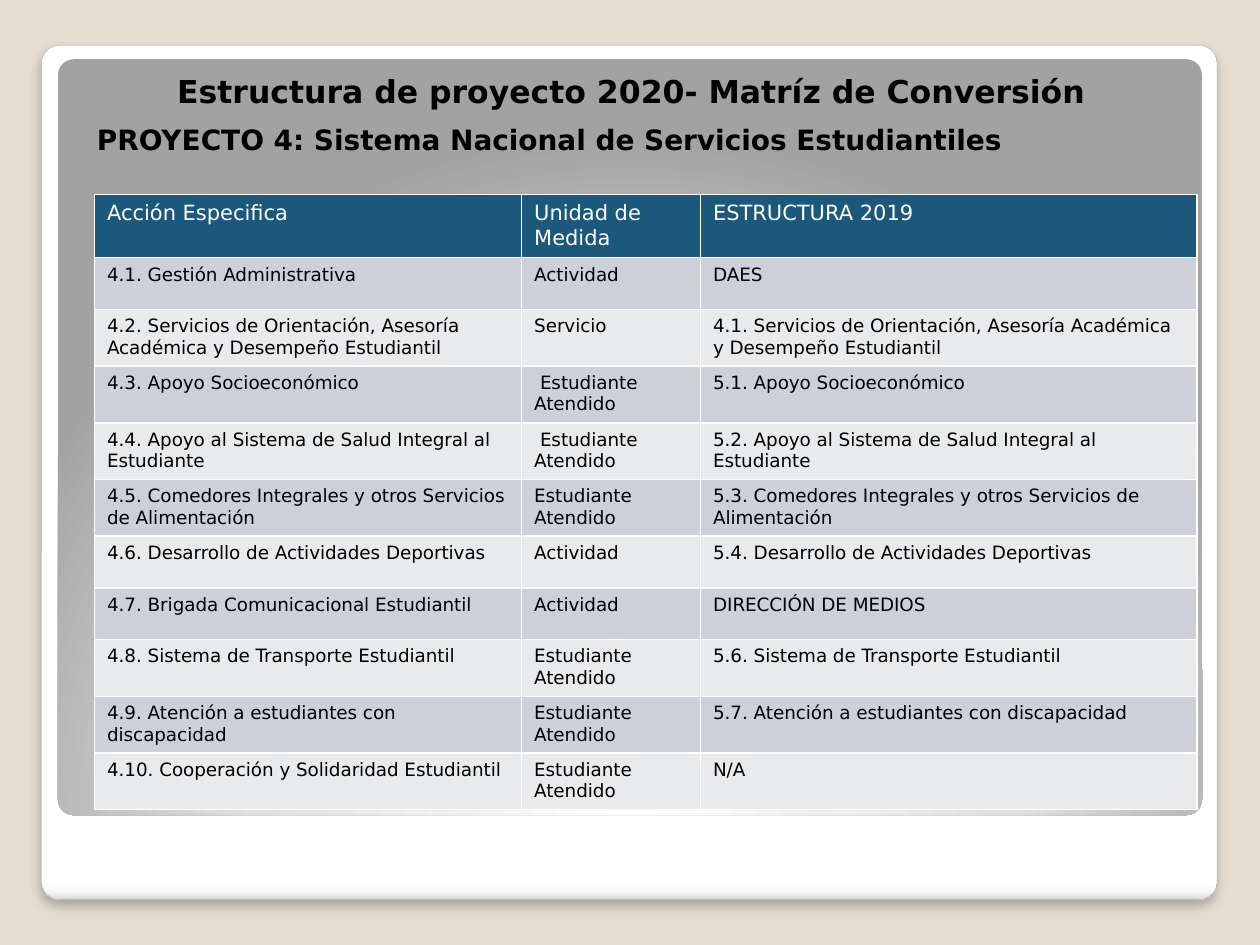
"""Build the slide with the 2020 project structure conversion matrix."""
from dataclasses import dataclass

import pptx
import pptx.dml.color
import pptx.enum.shapes
import pptx.enum.text
import pptx.oxml
import pptx.oxml.ns
import pptx.util

SLIDE_WIDTH = pptx.util.Inches(10)
SLIDE_HEIGHT = pptx.util.Inches(7.5)
FONT = "DejaVu Sans"
BLACK, WHITE, NAVY = "000000", "FFFFFF", "1B587C"
BANDS = ("CDD1D7", "E8EAEC")
COLUMN_SHARES = (33.9, 14.2, 39.4)
ROW_SHARE = 5.47
CORNER = 0.021
ATTENDED = "Estudiante Atendido"
HEADER = ("Acción Especifica", "Unidad de Medida", "ESTRUCTURA 2019")
ACTIONS = (
    ("4.1. Gestión Administrativa", "Actividad", "DAES"),
    ("4.2. Servicios de Orientación, Asesoría Académica y Desempeño Estudiantil", "Servicio",
     "4.1. Servicios de Orientación, Asesoría Académica y Desempeño Estudiantil"),
    ("4.3. Apoyo Socioeconómico", " " + ATTENDED, "5.1. Apoyo Socioeconómico"),
    ("4.4. Apoyo al Sistema de Salud Integral al Estudiante", " " + ATTENDED,
     "5.2. Apoyo al Sistema de Salud Integral al Estudiante"),
    ("4.5. Comedores Integrales y otros Servicios de Alimentación", ATTENDED,
     "5.3. Comedores Integrales y otros Servicios de Alimentación"),
    ("4.6. Desarrollo de Actividades Deportivas", "Actividad",
     "5.4. Desarrollo de Actividades Deportivas"),
    ("4.7. Brigada Comunicacional Estudiantil", "Actividad", "DIRECCIÓN DE MEDIOS"),
    ("4.8. Sistema de Transporte Estudiantil", ATTENDED, "5.6. Sistema de Transporte Estudiantil"),
    ("4.9. Atención a estudiantes con discapacidad", ATTENDED,
     "5.7. Atención a estudiantes con discapacidad"),
    ("4.10. Cooperación y Solidaridad Estudiantil", ATTENDED, "N/A"),
)


def across(share: float) -> int:
    """Turn a percentage of the slide's width into a length."""
    return round(SLIDE_WIDTH * share / 100)


def down(share: float) -> int:
    """Turn a percentage of the slide's height into a length."""
    return round(SLIDE_HEIGHT * share / 100)


@dataclass(frozen=True)
class Area:
    """A rectangle in percentages of the slide's size."""
    left: float
    top: float
    width: float
    height: float

    def lengths(self) -> tuple[int, int, int, int]:
        """Return left, top, width and height as lengths."""
        return across(self.left), down(self.top), across(self.width), down(self.height)


@dataclass(frozen=True)
class Panel:
    """A rounded background panel with gradient stops and their direction."""
    area: Area
    stops: tuple[tuple[int, str], ...]
    direction: str
    outline: str = ""
    shadow: str = ""


CARD = Panel(
    Area(3.3, 4.8, 93.3, 90.4),
    ((0, WHITE), (98, WHITE), (99, "F7F7F7"), (100, "DADADA")),
    '<a:lin ang="5400000" scaled="0"/>',
    outline="A4A4A4",
    shadow='<a:outerShdw {} blurRad="76200" dist="50800" dir="5400000" algn="t" rotWithShape="0">'
           '<a:srgbClr val="000000"><a:alpha val="25000"/></a:srgbClr></a:outerShdw>',
)
BACKDROP = Panel(
    Area(4.6, 6.27, 90.8, 80),
    ((0, WHITE), (55, "E1E1E1"), (100, "A2A2A2")),
    '<a:path path="circle"><a:fillToRect l="50000" t="175000" r="50000" b="-75000"/></a:path>',
)


def color(code: str) -> pptx.dml.color.RGBColor:
    """Turn a hex string into a colour."""
    return pptx.dml.color.RGBColor.from_string(code)


def write(frame, text: str, *, size: float, ink: str = BLACK, bold: bool = False,
          align=pptx.enum.text.PP_ALIGN.LEFT) -> None:
    """Write one formatted paragraph into a text frame."""
    para = frame.paragraphs[0]
    para.alignment = align
    span = para.add_run()
    span.text = text
    span.font.name = FONT
    span.font.size = pptx.util.Pt(size)
    span.font.bold = bold
    span.font.color.rgb = color(ink)


def draw_panel(page, panel: Panel) -> None:
    """Draw a rounded panel with its gradient, outline and shadow."""
    shape = page.shapes.add_shape(
        pptx.enum.shapes.MSO_SHAPE.ROUNDED_RECTANGLE, *panel.area.lengths())
    shape.adjustments[0] = CORNER
    shape.fill.solid()
    shape.shadow.inherit = False
    if panel.outline:
        shape.line.color.rgb = color(panel.outline)
        shape.line.width = pptx.util.Pt(0.16)
    else:
        shape.line.fill.background()
    namespace = pptx.oxml.ns.nsdecls("a")
    stops = "".join(f'<a:gs pos="{share * 1000}"><a:srgbClr val="{code}"/></a:gs>'
                    for share, code in panel.stops)
    gradient = pptx.oxml.parse_xml(
        f'<a:gradFill {namespace} rotWithShape="1"><a:gsLst>{stops}</a:gsLst>'
        f'{panel.direction}</a:gradFill>')
    properties = shape.element.spPr
    properties.replace(properties.find(pptx.oxml.ns.qn("a:solidFill")), gradient)
    if panel.shadow:
        effects = properties.find(pptx.oxml.ns.qn("a:effectLst"))
        effects.append(pptx.oxml.parse_xml(panel.shadow.format(namespace)))


def place_title(page, area: Area, text: str) -> None:
    """Move the title placeholder in front of the panels and fill it."""
    title = page.shapes.title
    title.element.getparent().append(title.element)
    title.left, title.top, title.width, title.height = area.lengths()
    frame = title.text_frame
    frame.word_wrap = False
    frame.auto_size = pptx.enum.text.MSO_AUTO_SIZE.SHAPE_TO_FIT_TEXT
    frame.vertical_anchor = pptx.enum.text.MSO_ANCHOR.TOP
    write(frame, text, size=18, bold=True, align=pptx.enum.text.PP_ALIGN.CENTER)


def place_subtitle(page, area: Area, text: str) -> None:
    """Add the project name below the title."""
    frame = page.shapes.add_textbox(*area.lengths()).text_frame
    frame.word_wrap = True
    frame.auto_size = pptx.enum.text.MSO_AUTO_SIZE.SHAPE_TO_FIT_TEXT
    write(frame, text, size=16, bold=True)


def draw_matrix(page, left: float, top: float) -> None:
    """Draw the conversion table with a header and banded rows."""
    rows = (HEADER, *ACTIONS)
    area = Area(left, top, sum(COLUMN_SHARES), ROW_SHARE * len(rows))
    table = page.shapes.add_table(len(rows), len(HEADER), *area.lengths()).table
    for column, share in zip(table.columns, COLUMN_SHARES):
        column.width = across(share)
    for index, texts in enumerate(rows):
        header = index == 0
        table.rows[index].height = down(ROW_SHARE)
        for cell, text in zip(table.rows[index].cells, texts):
            cell.fill.solid()
            cell.fill.fore_color.rgb = color(NAVY if header else BANDS[(index - 1) % 2])
            write(cell.text_frame, text, size=12 if header else 10.5,
                  ink=WHITE if header else BLACK)


def main() -> None:
    """Build and save the deck."""
    deck = pptx.Presentation()
    deck.slide_width, deck.slide_height = SLIDE_WIDTH, SLIDE_HEIGHT
    page = deck.slides.add_slide(deck.slide_layouts.get_by_name("Title Only"))
    page.background.fill.solid()
    page.background.fill.fore_color.rgb = color("E3DED1")
    for panel in (CARD, BACKDROP):
        draw_panel(page, panel)
    place_title(page, Area(13, 6.93, 74.2, 5.33),
                "Estructura de proyecto 2020- Matríz de Conversión")
    place_subtitle(page, Area(6.7, 12.27, 89.8, 4.93),
                   "PROYECTO 4: Sistema Nacional de Servicios Estudiantiles")
    draw_matrix(page, 7.5, 20.6)
    deck.save("out.pptx")


if __name__ == "__main__":
    main()
